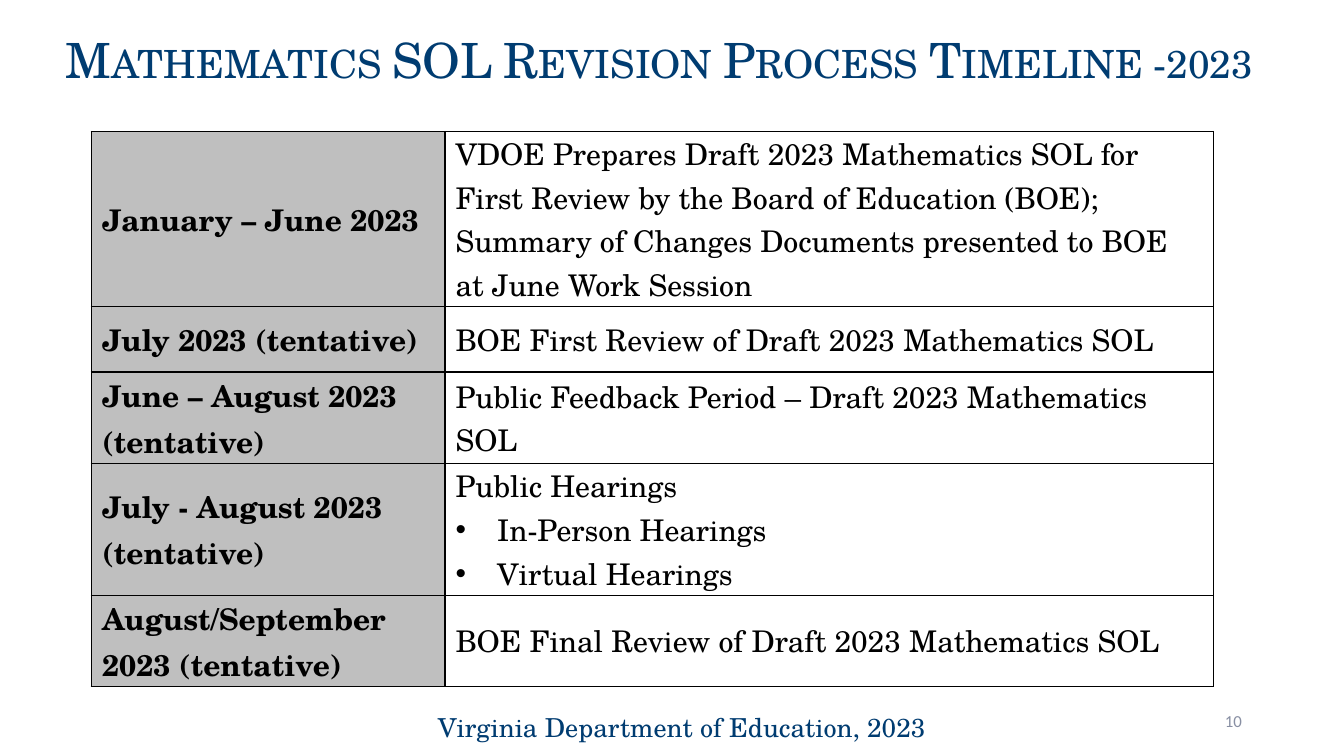
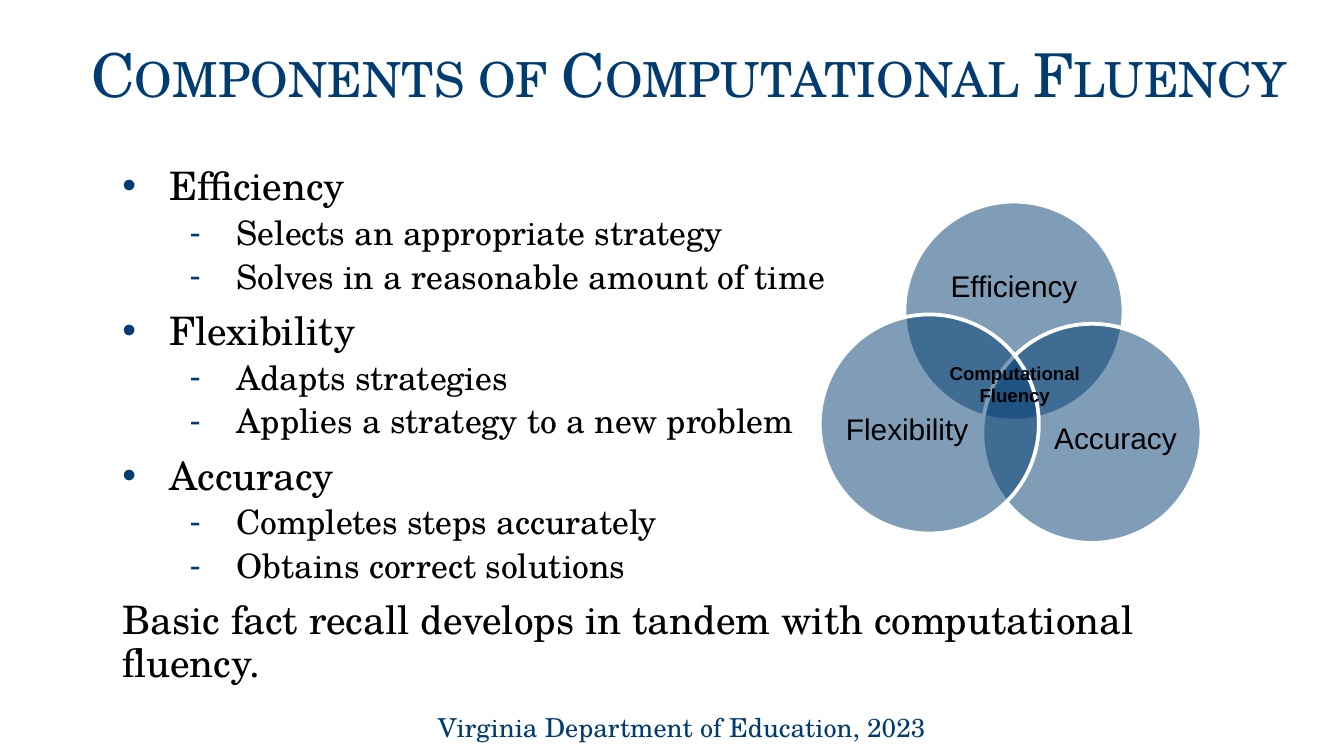
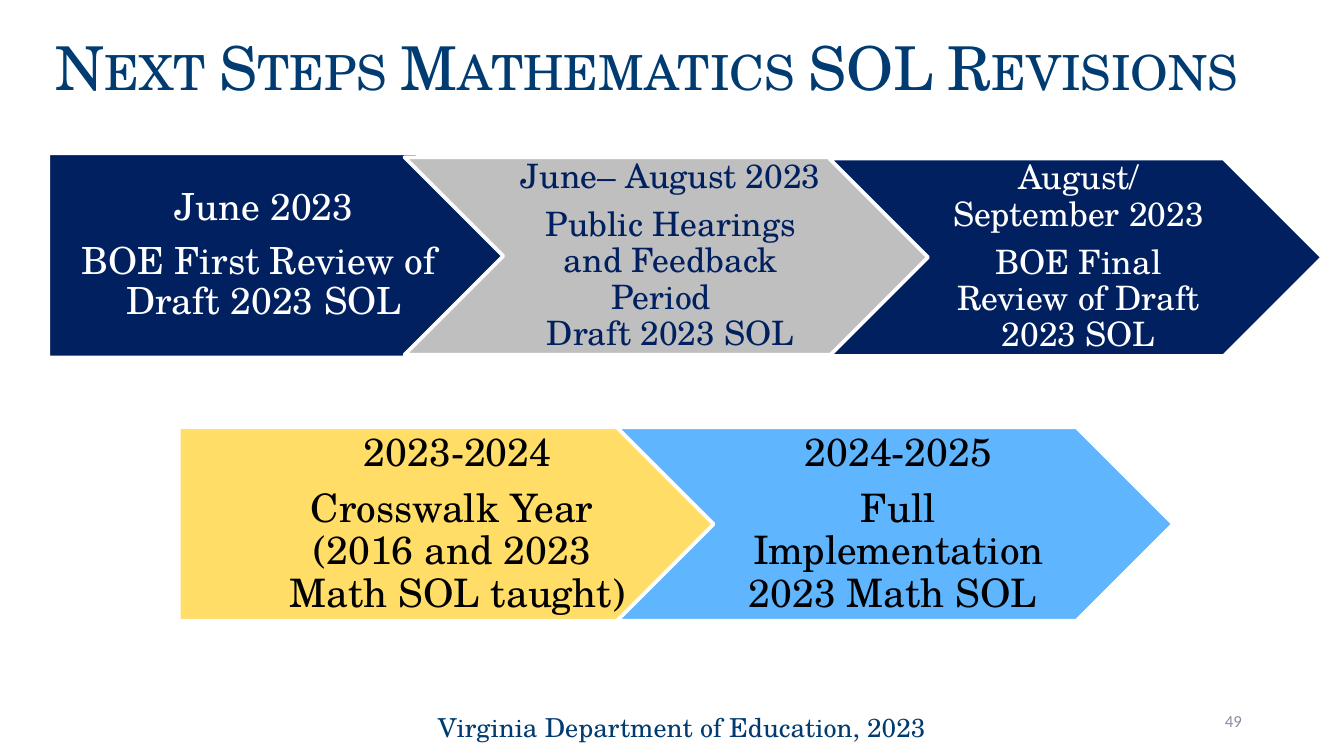
import dataclasses
import typing

import pptx
import pptx.dml.color
import pptx.enum.shapes
import pptx.enum.text
import pptx.oxml
import pptx.oxml.ns
import pptx.util

EMU_PER_PX = 9144  # 100 px to the inch
SLIDE_WIDTH = 1000
ALIGN = pptx.enum.text.PP_ALIGN
ANCHOR = pptx.enum.text.MSO_ANCHOR
SHAPE = pptx.enum.shapes.MSO_SHAPE


@dataclasses.dataclass(frozen=True)
class Theme:
    serif: str = "TeX Gyre Schola"
    sans: str = "Arial"
    number_font: str = "Calibri"
    blue: str = "003C71"
    navy: str = "002060"
    gray: str = "BFBFBF"
    yellow: str = "FFDD66"
    sky: str = "60B5FF"
    number_gray: str = "888FA3"
    black: str = "000000"
    white: str = "FFFFFF"
    title: float = 32.4
    long_title: float = 26
    body: float = 21
    step: float = 20
    detail: float = 18
    cell: float = 16
    footer: float = 14
    center_label: float = 10
    number: float = 9


THEME = Theme()


@dataclasses.dataclass(frozen=True)
class Style:
    size: float
    color: str = THEME.black
    name: str = THEME.serif
    bold: bool = False
    small_caps: bool = False
    paragraph: dict = dataclasses.field(default_factory=dict)
    indent: typing.Optional[tuple] = None
    bullet: str = ""
    bullet_color: str = THEME.blue


def px(length):
    return pptx.util.Emu(round(length * EMU_PER_PX))


def rgb(color):
    return pptx.dml.color.RGBColor.from_string(color)


def set_attributes(target, values):
    for name, value in values.items():
        setattr(target, name, value)


def append_xml(parent, xml):
    """Append an element of the drawing namespace and return it."""
    tag, rest = xml.split(" ", 1)
    declaration = pptx.oxml.ns.nsdecls("a")
    element = pptx.oxml.parse_xml(f"{tag} {declaration} {rest}")
    parent.append(element)
    return element


def set_bullet(paragraph, style):
    properties = paragraph._p.get_or_add_pPr()
    margin, first_line = style.indent
    properties.set("marL", str(px(margin)))
    properties.set("indent", str(px(first_line)))
    if style.bullet:
        append_xml(properties, f'<a:buClr ><a:srgbClr val="{style.bullet_color}"/></a:buClr>')
        append_xml(properties, f'<a:buFont typeface="{THEME.sans}"/>')
        append_xml(properties, f'<a:buChar char="{style.bullet}"/>')


def write_text(frame, lines):
    """Fill a text frame with (text, style) pairs, one per paragraph."""
    for index, (text, style) in enumerate(lines):
        paragraph = frame.add_paragraph() if index else frame.paragraphs[0]
        paragraph.text = text
        set_attributes(paragraph, style.paragraph)
        if style.indent:
            set_bullet(paragraph, style)
        for run in paragraph.runs:
            set_attributes(run.font, {"size": pptx.util.Pt(style.size),
                                      "name": style.name, "bold": style.bold})
            run.font.color.rgb = rgb(style.color)
            if style.small_caps:
                run.font._element.set("cap", "small")


def margins(left, top, right, bottom):
    return {"margin_left": px(left), "margin_top": px(top),
            "margin_right": px(right), "margin_bottom": px(bottom)}


def add_text(slide, box, lines, insets=(7, 4, 7, 4), anchor=ANCHOR.TOP):
    frame = slide.shapes.add_textbox(*map(px, box)).text_frame
    set_attributes(frame, {"word_wrap": True, "vertical_anchor": anchor, **margins(*insets)})
    write_text(frame, lines)


def add_outlined_shape(slide, kind, box, color):
    shape = slide.shapes.add_shape(kind, *map(px, box))
    shape.shadow.inherit = False
    shape.fill.solid()
    shape.fill.fore_color.rgb = rgb(color)
    shape.line.color.rgb = rgb(THEME.white)
    shape.line.width = pptx.util.Pt(2)
    return shape


def centered(size, **values):
    """Style of labels inside shapes; the gap after follows the type size."""
    return Style(size, paragraph={"alignment": ALIGN.CENTER, "line_spacing": 0.9,
                                  "space_after": pptx.util.Pt(size * 0.35)}, **values)


def add_title(slide, box, text, size=THEME.title, alignment=ALIGN.LEFT):
    style = Style(size, THEME.blue, small_caps=True,
                  paragraph={"alignment": alignment, "line_spacing": 0.9})
    add_text(slide, box, [(text, style)], (68, 4, 7, 4), ANCHOR.BOTTOM)


def add_footer(slide, number=None):
    add_text(slide, (316, 519, 390, 44),
             [("Virginia Department of Education, 2023", Style(THEME.footer, THEME.blue))],
             (10, 10, 10, 10))
    if number:
        style = Style(THEME.number, THEME.number_gray, THEME.number_font,
                      paragraph={"alignment": ALIGN.RIGHT})
        add_text(slide, (706, 521, 225, 30), [(number, style)], anchor=ANCHOR.MIDDLE)


def set_borders(cell):
    properties = cell._tc.get_or_add_tcPr()
    for index, side in enumerate(("lnL", "lnR", "lnT", "lnB")):
        border = append_xml(properties, f'<a:{side} w="12700"><a:solidFill><a:srgbClr '
                            f'val="{THEME.black}"/></a:solidFill></a:{side}>')
        properties.insert(index, border)


def add_timeline_table(slide, left, top, column_widths, row_heights, rows):
    period_style = Style(THEME.cell, bold=True)
    event_style = Style(THEME.cell)
    hearing_style = Style(THEME.cell, paragraph={"level": 2}, indent=(31, -31),
                          bullet="•", bullet_color=THEME.black)
    box = (left, top, sum(column_widths), sum(row_heights))
    table = slide.shapes.add_table(len(rows), len(column_widths), *map(px, box)).table
    for column, width in zip(table.columns, column_widths):
        column.width = px(width)
    for row, height, (period, event, *hearings) in zip(table.rows, row_heights, rows):
        row.height = px(height)
        contents = ([(period, period_style)],
                    [(event, event_style)] + [(hearing, hearing_style) for hearing in hearings])
        for cell, lines, color in zip(row.cells, contents, (THEME.gray, THEME.white)):
            set_attributes(cell, {"vertical_anchor": ANCHOR.MIDDLE, **margins(8, 0, 8, 0)})
            cell.fill.solid()
            cell.fill.fore_color.rgb = rgb(color)
            set_borders(cell)
            write_text(cell.text_frame, lines)


def add_components(slide, box, components, conclusion):
    def bulleted(size, level, margin, space, bullet):
        return Style(size, indent=(margin, -35), bullet=bullet,
                     paragraph={"level": level, "line_spacing": 0.9,
                                "space_before": pptx.util.Pt(space)})

    component_style = bulleted(THEME.body, 0, 50, 8, "•")
    trait_style = bulleted(THEME.detail, 1, 100, 4, "-")
    lines = []
    for component, traits in components:
        lines.append((component, component_style))
        lines += [(trait, trait_style) for trait in traits]
    conclusion_style = dataclasses.replace(component_style, indent=(15, 0), bullet="")
    add_text(slide, box, lines + [(conclusion, conclusion_style)])


def add_venn(slide, left, top):
    diameter = 163
    label_style = centered(THEME.cell, name=THEME.sans)
    circles = (
        ("Efficiency", (63, 0), (85, 28, 119, 73)),
        ("Accuracy", (121, 91), (171, 133, 98, 89)),
        ("Flexibility", (0, 84), (16, 126, 98, 89)),
    )
    for label, (x, y), (label_x, label_y, width, height) in circles:
        circle = add_outlined_shape(slide, SHAPE.OVAL, (left + x, top + y, diameter, diameter),
                                    THEME.blue)
        color = circle.fill._xPr.find(".//" + pptx.oxml.ns.qn("a:srgbClr"))
        append_xml(color, '<a:alpha val="50000"/>')
        add_text(slide, (left + label_x, top + label_y, width, height), [(label, label_style)],
                 (0, 0, 0, 0), ANCHOR.MIDDLE)
    center_style = Style(THEME.center_label, name=THEME.sans, bold=True,
                         paragraph={"alignment": ALIGN.CENTER})
    add_text(slide, (left + 70, top + 114, 150, 67), [("Computational Fluency", center_style)],
             (10, 5, 10, 5))


def add_step(slide, kind, box, fill, color, size, lines):
    """Draw an arrow step whose text keeps clear of its point, half as deep as it is high."""
    left, top, width, height = box
    add_outlined_shape(slide, kind, box, fill)
    if kind == SHAPE.CHEVRON:
        text_box = (left + height // 2, top, width - height, height)
        inset = 8
    else:
        text_box = (left, top, width - height // 4, height)
        inset = 12
    style = centered(size, color=color)
    add_text(slide, text_box, [(line, style) for line in lines], (inset, 6, 3, 6), ANCHOR.MIDDLE)


def build_timeline(slide):
    add_title(slide, (-36, 0, 1000, 70), "Mathematics SOL Revision Process Timeline -2023 ",
              THEME.long_title, ALIGN.CENTER)
    add_timeline_table(slide, 68, 98, (263, 572), (130, 49, 68, 98, 68), (
        ("January – June 2023",
         "VDOE Prepares Draft 2023 Mathematics SOL for First Review by the Board of Education "
         "(BOE); Summary of Changes Documents presented to BOE at June Work Session"),
        ("July 2023 (tentative)", "BOE First Review of Draft 2023 Mathematics SOL"),
        ("June – August 2023 (tentative)", "Public Feedback Period – Draft 2023 Mathematics SOL"),
        ("July - August 2023 (tentative)",
         "Public Hearings", "In-Person Hearings", "Virtual Hearings"),
        ("August/September 2023 (tentative)", "BOE Final Review of Draft 2023 Mathematics SOL"),
    ))
    add_footer(slide, "10")


def build_fluency(slide):
    add_title(slide, (0, 0, 1000, 86), "Components of Computational Fluency")
    add_components(slide, (69, 120, 862, 387), (
        ("Efficiency", ("Selects an appropriate strategy",
                        "Solves in a reasonable amount of time")),
        ("Flexibility", ("Adapts strategies", "Applies a strategy to a new problem")),
        ("Accuracy", ("Completes steps accurately", "Obtains correct solutions")),
    ), "Basic fact recall develops in tandem with computational fluency.")
    add_venn(slide, 610, 150)
    add_footer(slide)


def build_next_steps(slide):
    add_title(slide, (-27, 11, 972, 70), "Next Steps Mathematics SOL Revisions")
    steps = (
        (SHAPE.PENTAGON, (133, 318, 442, 144), THEME.yellow, THEME.black, THEME.body,
         ("2023-2024", "Crosswalk Year \n(2016 and 2023 \nMath SOL taught)")),
        (SHAPE.CHEVRON, (459, 318, 414, 144), THEME.sky, THEME.black, THEME.body,
         ("2024-2025", "Full Implementation 2023 Math SOL ")),
        (SHAPE.PENTAGON, (36, 114, 350, 152), THEME.navy, THEME.white, THEME.step,
         ("June 2023", "BOE First Review of  Draft 2023 SOL")),
        (SHAPE.CHEVRON, (301, 117, 392, 147), THEME.gray, THEME.navy, THEME.detail,
         ("June– August 2023", "Public Hearings and Feedback Period  \nDraft 2023 SOL")),
        (SHAPE.CHEVRON, (617, 118, 367, 147), THEME.navy, THEME.white, THEME.detail,
         ("August/September 2023", "BOE Final Review of Draft 2023 SOL")),
    )
    for step in steps:
        add_step(slide, *step)
    add_footer(slide, "49")


def main():
    presentation = pptx.Presentation()
    presentation.slide_width = px(SLIDE_WIDTH)
    presentation.slide_height = px(SLIDE_WIDTH * 9 / 16)
    for build in (build_timeline, build_fluency, build_next_steps):
        build(presentation.slides.add_slide(presentation.slide_layouts[6]))
    presentation.save("out.pptx")


if __name__ == "__main__":
    main()
